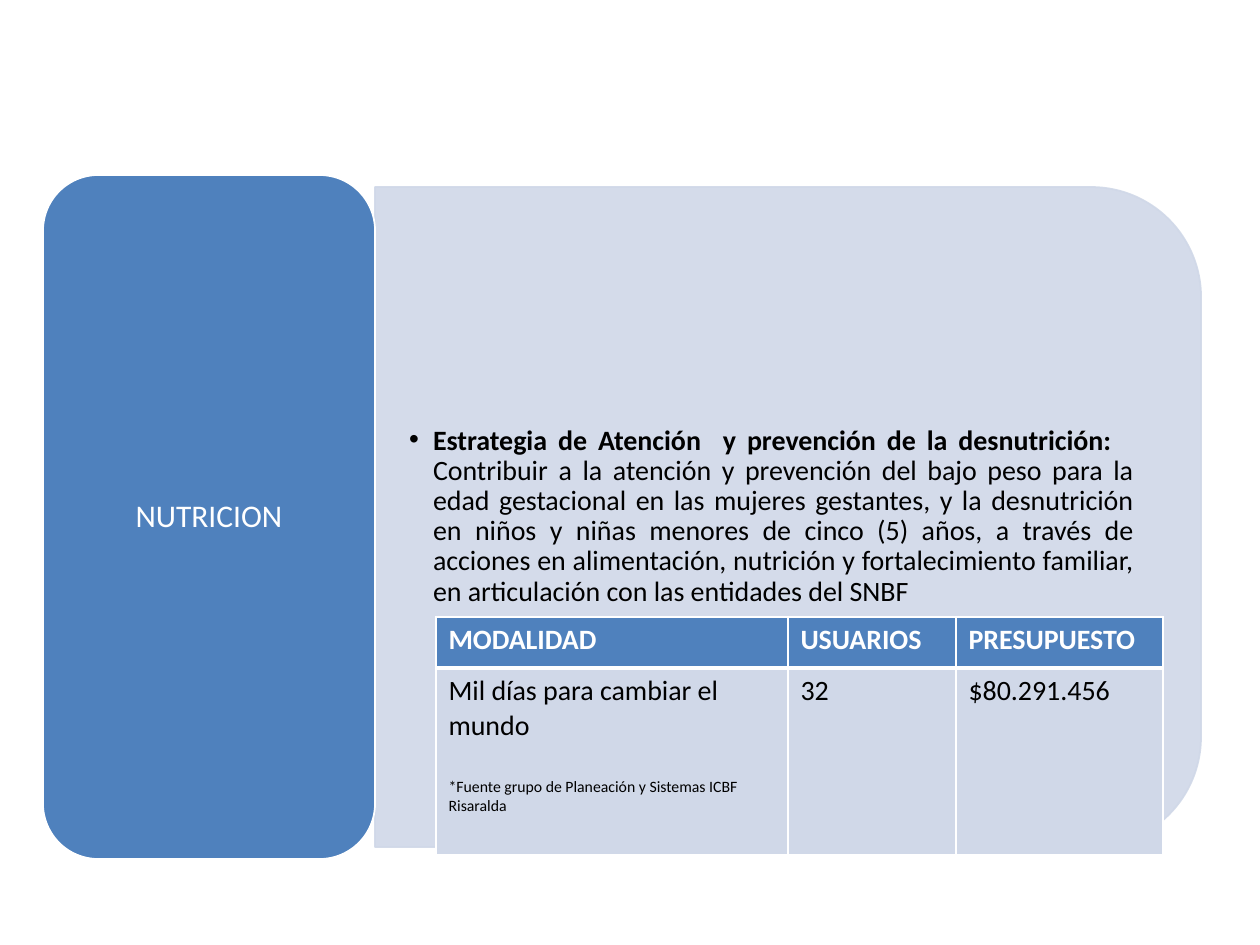
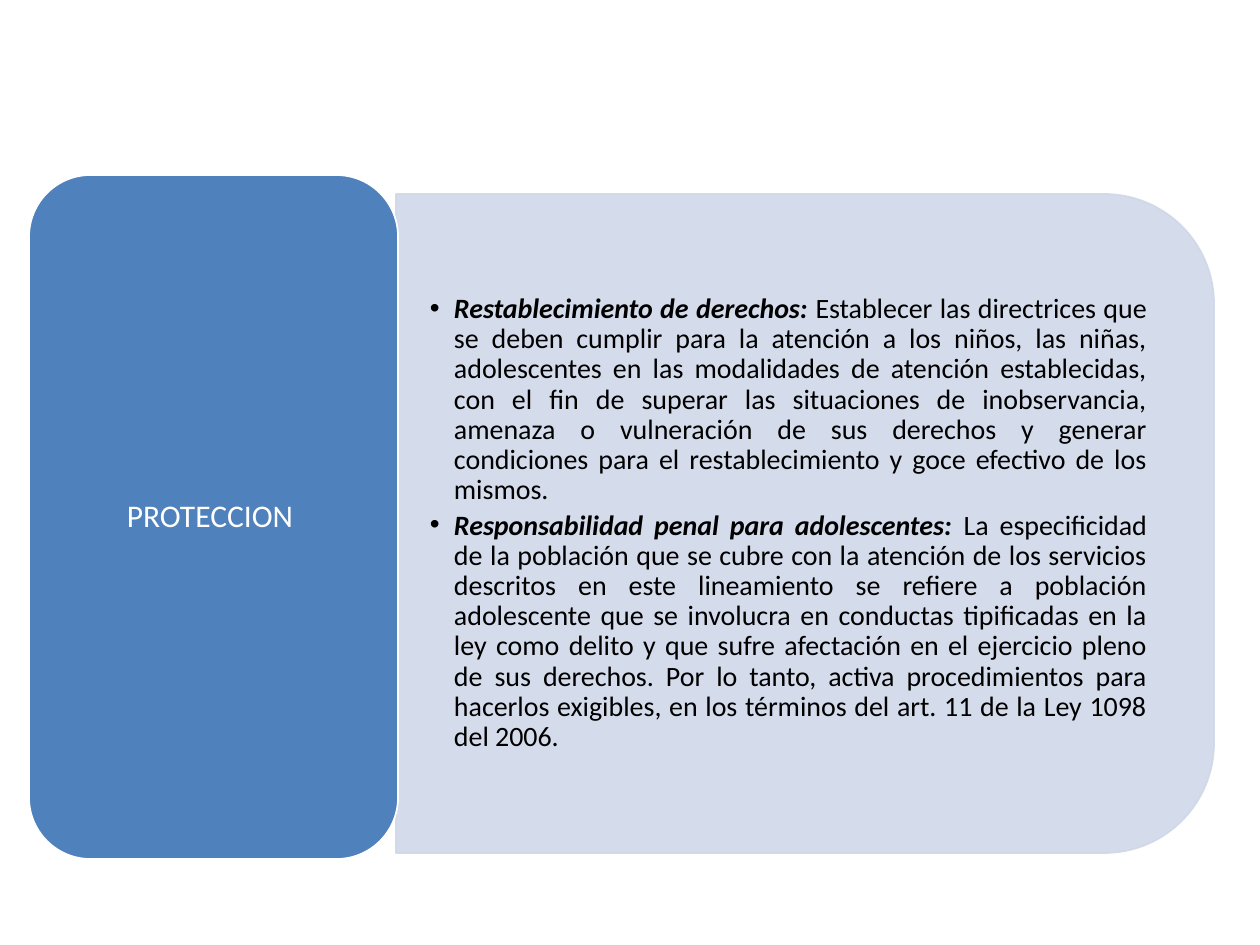
from dataclasses import dataclass

from lxml import etree
from pptx import Presentation
from pptx.dml.color import RGBColor
from pptx.enum.shapes import MSO_SHAPE
from pptx.enum.text import MSO_ANCHOR, MSO_AUTO_SIZE, PP_ALIGN
from pptx.oxml.ns import qn
from pptx.util import Pt

ROUNDED = MSO_SHAPE.ROUNDED_RECTANGLE
ROUND_TOP = MSO_SHAPE.ROUND_2_SAME_RECTANGLE
MIDDLE = MSO_ANCHOR.MIDDLE
NO_AUTOFIT = MSO_AUTO_SIZE.NONE
CENTER, JUSTIFY = PP_ALIGN.CENTER, PP_ALIGN.JUSTIFY

EMU_PER_PX = 914400 / 126
SLIDE_WIDTH, SLIDE_HEIGHT = 1260, 945


@dataclass(frozen=True)
class Theme:
    font: str = "Calibri"
    accent: RGBColor = RGBColor(0x4F, 0x81, 0xBD)
    pale: RGBColor = RGBColor(0xD0, 0xD8, 0xE8)
    white: RGBColor = RGBColor(0xFF, 0xFF, 0xFF)
    black: RGBColor = RGBColor(0x00, 0x00, 0x00)
    label_size: int = 18
    text_size: int = 16
    note_size: int = 9
    line_spacing: float = 0.9


THEME = Theme()


def px(length):
    return round(length * EMU_PER_PX)


def place(shape, left, top, width, height):
    shape.left, shape.top = px(left), px(top)
    shape.width, shape.height = px(width), px(height)


def format_run(run, size, color, bold=False, italic=False):
    font = run.font
    font.name, font.size = THEME.font, Pt(size)
    font.bold, font.italic = bold, italic
    font.color.rgb = color


def add_block(slide, kind, box, fill, line):
    left, top, width, height = (px(length) for length in box)
    shape = slide.shapes.add_shape(kind, left, top, width, height)
    shape.shadow.inherit = False
    shape.fill.solid()
    shape.fill.fore_color.rgb = fill
    shape.line.color.rgb = line
    shape.line.width = Pt(1)
    return shape


def add_panel(slide, left, top, width, height):
    """Pale panel, rounded on the right: a top-rounded shape turned by 90 degrees."""
    turned_left = left + (width - height) / 2
    turned_top = top + (height - width) / 2
    panel = add_block(slide, ROUND_TOP, (turned_left, turned_top, height, width),
                      THEME.pale, THEME.pale)
    panel.rotation = 90
    for color in panel.element.iter(qn("a:srgbClr")):
        etree.SubElement(color, qn("a:alpha"), val="90000")


def prepare_placeholder(placeholder, box, inset_x, inset_y):
    """Move a placeholder in front of the blocks and return its text frame."""
    place(placeholder, *box)
    placeholder.element.getparent().append(placeholder.element)
    frame = placeholder.text_frame
    frame.word_wrap = True
    frame.auto_size = NO_AUTOFIT
    frame.vertical_anchor = MIDDLE
    frame.margin_left = frame.margin_right = px(inset_x)
    frame.margin_top = frame.margin_bottom = px(inset_y)
    return frame


def add_label(slide, text, box):
    add_block(slide, ROUNDED, box, THEME.accent, THEME.white)
    frame = prepare_placeholder(slide.shapes.title, box, 26, 22)
    frame.text = text
    paragraph = frame.paragraphs[0]
    paragraph.alignment = CENTER
    paragraph.line_spacing = THEME.line_spacing
    format_run(paragraph.runs[0], THEME.label_size, THEME.white)


def set_bullet(paragraph, indent):
    properties = paragraph._p.get_or_add_pPr()
    properties.set("marL", str(px(indent)))
    properties.set("indent", str(-px(indent)))
    etree.SubElement(properties, qn("a:buFont"), typeface="Arial")
    etree.SubElement(properties, qn("a:buChar"), char="•")


def add_list(slide, items, box, lead_italic, break_after_lead):
    frame = prepare_placeholder(slide.placeholders[1], box, 34, 18)
    for index, (lead, description) in enumerate(items):
        paragraph = frame.add_paragraph() if index else frame.paragraphs[0]
        paragraph.level = 1
        set_bullet(paragraph, 24)
        paragraph.alignment = JUSTIFY
        paragraph.line_spacing = THEME.line_spacing
        paragraph.space_before, paragraph.space_after = Pt(0), Pt(3)
        lead_run = paragraph.add_run()
        lead_run.text = lead
        format_run(lead_run, THEME.text_size, THEME.black, True, lead_italic)
        if break_after_lead:
            paragraph.add_line_break()
        description_run = paragraph.add_run()
        description_run.text = description
        format_run(description_run, THEME.text_size, THEME.black)


def set_cell_borders(cell, bottom_width):
    properties = cell._tc.get_or_add_tcPr()
    widths = {"a:lnL": 1, "a:lnR": 1, "a:lnT": 1, "a:lnB": bottom_width}
    for position, (tag, width) in enumerate(widths.items()):
        line = etree.Element(qn(tag), w=str(Pt(width)))
        fill = etree.SubElement(line, qn("a:solidFill"))
        etree.SubElement(fill, qn("a:srgbClr"), val=str(THEME.white))
        properties.insert(position, line)


def add_budget_table(slide, rows, note, left, top, column_widths, row_heights):
    frame = slide.shapes.add_table(len(rows), len(column_widths), px(left), px(top),
                                   px(sum(column_widths)), px(sum(row_heights)))
    table = frame.table
    for column, width in zip(table.columns, column_widths):
        column.width = px(width)
    for row_index, values in enumerate(rows):
        header = row_index == 0
        table.rows[row_index].height = px(row_heights[row_index])
        for column_index, value in enumerate(values):
            cell = table.cell(row_index, column_index)
            cell.fill.solid()
            cell.fill.fore_color.rgb = THEME.accent if header else THEME.pale
            edge = 3 if header or row_index == 1 else 1
            set_cell_borders(cell, edge if header else 1)
            cell.text = value
            format_run(cell.text_frame.paragraphs[0].runs[0], THEME.text_size,
                       THEME.white if header else THEME.black, header)
    # Source note under the last modality
    paragraph = table.cell(len(rows) - 1, 0).text_frame.add_paragraph()
    paragraph.text = note
    paragraph.space_before = Pt(20)
    format_run(paragraph.runs[0], THEME.note_size, THEME.black)


def add_program_slide(presentation, label, label_box, panel_box, items,
                      lead_italic=False, break_after_lead=False):
    slide = presentation.slides.add_slide(presentation.slide_layouts[1])
    left, top, width, _ = panel_box
    add_panel(slide, *panel_box)
    add_list(slide, items, (left, top + 32, width - 33, 595),
             lead_italic, break_after_lead)
    add_label(slide, label, label_box)
    return slide


def main():
    presentation = Presentation()
    presentation.slide_width = px(SLIDE_WIDTH)
    presentation.slide_height = px(SLIDE_HEIGHT)

    # Nutrition: strategy and budget
    nutrition = add_program_slide(
        presentation, "NUTRICION", (43, 175, 332, 684), (375, 187, 826, 660),
        [("Estrategia de Atención  y prevención de la desnutrición:  ",
          "Contribuir a la atención y prevención del bajo peso para la edad "
          "gestacional en las mujeres gestantes, y la desnutrición en niños y niñas "
          "menores de cinco (5) años, a través de acciones en alimentación, nutrición "
          "y fortalecimiento familiar, en articulación con las entidades del SNBF")],
        break_after_lead=True)
    add_budget_table(
        nutrition,
        [("MODALIDAD", "USUARIOS", "PRESUPUESTO"),
         ("Mil días para cambiar el mundo", "32", "$80.291.456")],
        "*Fuente grupo de Planeación y Sistemas ICBF Risaralda",
        436, 617, (352, 168, 207), (51, 187))

    # Protection: rights and adolescent responsibility
    add_program_slide(
        presentation, "PROTECCION ", (29, 175, 369, 684), (396, 194, 818, 659),
        [("Restablecimiento de derechos: ",
          "Establecer las directrices que se deben cumplir para la atención a los "
          "niños, las niñas, adolescentes en las modalidades de atención establecidas, "
          "con el fin de superar las situaciones de inobservancia, amenaza o "
          "vulneración de sus derechos y generar condiciones para el restablecimiento "
          "y goce efectivo de los mismos."),
         ("Responsabilidad penal para adolescentes: ",
          "La especificidad de la población que se cubre con la atención de los "
          "servicios descritos en este lineamiento se refiere a población adolescente "
          "que se involucra en conductas tipificadas en la ley como delito y que sufre "
          "afectación en el ejercicio pleno de sus derechos. Por lo tanto, activa "
          "procedimientos para hacerlos exigibles, en los términos del art. 11 de la "
          "Ley 1098 del 2006. ")],
        lead_italic=True)

    presentation.save("out.pptx")


if __name__ == "__main__":
    main()
